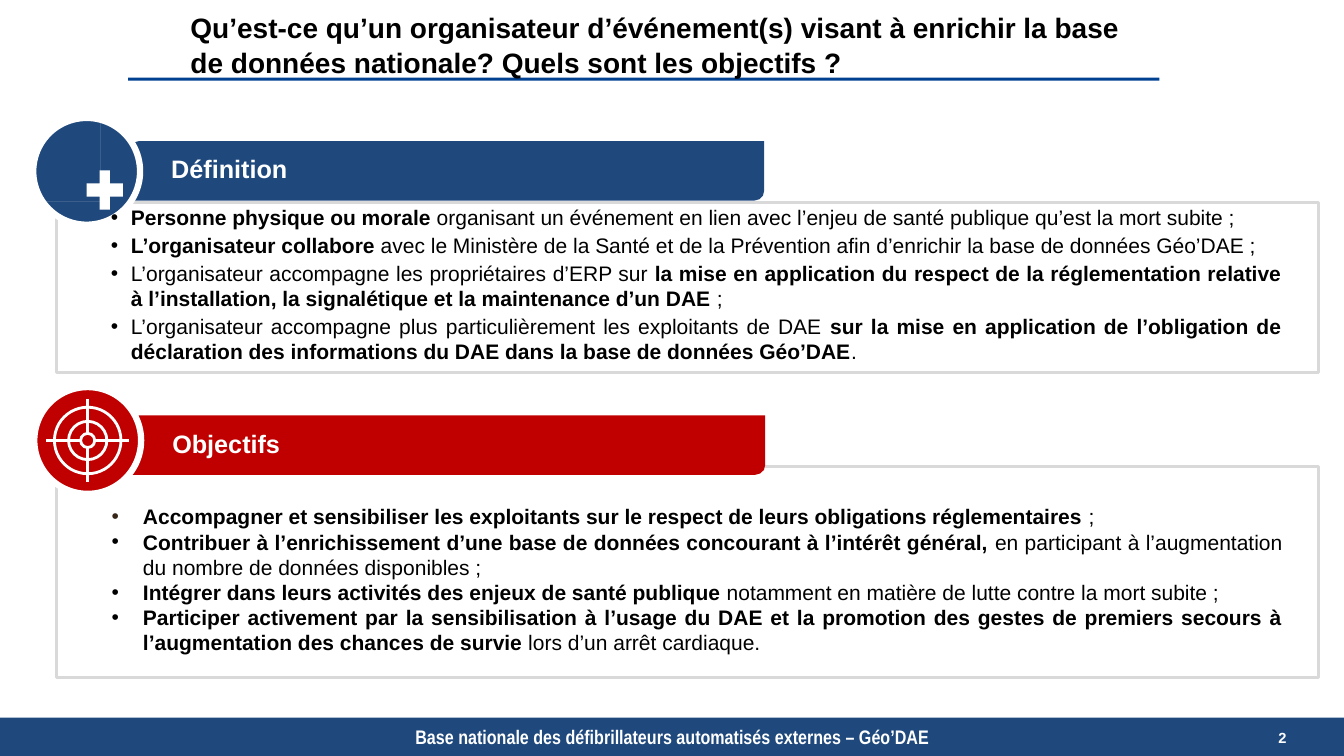
"""Build the slide defining an event organiser and its objectives for Géo’DAE."""
from lxml.etree import SubElement
from pptx import Presentation
from pptx.dml.color import RGBColor
from pptx.enum.shapes import MSO_CONNECTOR, MSO_SHAPE
from pptx.enum.text import MSO_ANCHOR, PP_ALIGN
from pptx.oxml.ns import qn
from pptx.util import Inches, Pt

COLORS = {"blue": "1F497D", "rule": "004192", "red": "C00000", "white": "FFFFFF",
          "grey": "D9D9D9", "black": "000000", "brown": "372517"}


def add_box(kind, place, fill=None, line=None, width=1):
    shape = slide.shapes.add_shape(kind, *map(Inches, place))
    shape.shadow.inherit = False
    if fill:
        shape.fill.solid()
        shape.fill.fore_color.rgb = RGBColor.from_string(COLORS[fill])
    else:
        shape.fill.background()
    if line:
        shape.line.color.rgb = RGBColor.from_string(COLORS[line])
        shape.line.width = Pt(width)
    else:
        shape.line.fill.background()
    return shape


def write(shape, paragraphs, size, color="black", font="Arial", indent=0,
          bullet_colors=(), frame_format=None, paragraph_format=None):
    frame = shape.text_frame
    frame.word_wrap = True
    for name, value in (frame_format or {}).items():
        setattr(frame, name, value)
    for index, runs in enumerate(paragraphs):
        paragraph = frame.add_paragraph() if index else frame.paragraphs[0]
        for name, value in (paragraph_format or {}).items():
            if index or name != "space_before":
                setattr(paragraph, name, value)
        if indent:
            properties = paragraph._p.get_or_add_pPr()
            properties.set("marL", str(Inches(indent)))
            properties.set("indent", str(-Inches(indent)))
            bullet_color = SubElement(properties, qn("a:buClr"))
            SubElement(bullet_color, qn("a:srgbClr"), val=COLORS[bullet_colors[index]])
            SubElement(properties, qn("a:buFont"), typeface="Arial")
            SubElement(properties, qn("a:buChar"), char="•")
        for text, bold in runs:
            run = paragraph.add_run()
            run.text = text
            run_format = {"name": font, "size": Pt(size), "bold": bold}
            for name, value in run_format.items():
                setattr(run.font, name, value)
            run.font.color.rgb = RGBColor.from_string(COLORS[color])


presentation = Presentation()
presentation.slide_width = Inches(13.33)
presentation.slide_height = Inches(7.5)
slide = presentation.slides.add_slide(presentation.slide_layouts[6])

add_box(MSO_SHAPE.RECTANGLE, (0, 7.12, 13.33, 0.38), "blue")
footer = slide.shapes.add_textbox(*map(Inches, (2.93, 7.2, 7.48, 0.22)))
write(footer, [[("Base nationale des défibrillateurs automatisés externes – Géo’DAE", True)]],
      14, "white", "Arial Narrow", frame_format={"vertical_anchor": MSO_ANCHOR.MIDDLE},
      paragraph_format={"alignment": PP_ALIGN.CENTER})
page_number = slide.shapes.add_textbox(*map(Inches, (10.79, 7.12, 1.97, 0.39)))
write(page_number, [[("2", True)]], 10.5, "white",
      frame_format={"vertical_anchor": MSO_ANCHOR.MIDDLE, "margin_right": 0},
      paragraph_format={"alignment": PP_ALIGN.RIGHT})

add_box(MSO_SHAPE.RECTANGLE, (1.27, 0.77, 10.23, 0.03), "rule")
title = slide.shapes.add_textbox(*map(Inches, (1.79, 0.22, 9.72, 0.43)))
write(title, [[("Qu’est-ce qu’un organisateur d’événement(s) visant à enrichir la base de "
                "données nationale? Quels sont les objectifs ?", True)]], 20,
      frame_format={"vertical_anchor": MSO_ANCHOR.MIDDLE},
      paragraph_format={"line_spacing": 1.05})

sections = [
    ("Définition", "blue", (0.56, 2.01, 12.52, 1.69), (1.28, 1.4), (0.33, 1.17)),
    ("Objectifs", "red", (0.56, 4.63, 12.52, 2.09), (1.29, 4.12), (0.34, 3.84)),
]
for heading, color, frame_place, banner_corner, badge_corner in sections:
    add_box(MSO_SHAPE.RECTANGLE, frame_place, "white", "grey", 2.25)
    banner = add_box(MSO_SHAPE.ROUND_2_DIAG_RECTANGLE, (*banner_corner, 6.3, 0.59), color)
    write(banner, [[(heading, True)]], 18, "white",
          frame_format={"vertical_anchor": MSO_ANCHOR.MIDDLE, "margin_left": Inches(0.39),
                        "margin_top": 0, "margin_bottom": Inches(0.04)},
          paragraph_format={"alignment": PP_ALIGN.LEFT})
    add_box(MSO_SHAPE.OVAL, (*badge_corner, 1.06, 1.06), color, "white", 4.5)

heart_path = [
    (0.85, 2.02), (0.67, 1.88, 0.57, 1.75, 0.56, 1.64), (0.56, 1.6),
    (0.57, 1.51, 0.62, 1.47, 0.68, 1.47), (0.73, 1.47, 0.75, 1.49, 0.79, 1.53),
    (0.85, 1.61), (0.91, 1.53), (0.95, 1.49, 0.97, 1.47, 1.02, 1.47),
    (1.08, 1.47, 1.13, 1.51, 1.14, 1.6), (1.14, 1.73), (1.2, 1.73),
    (1.21, 1.7, 1.22, 1.67, 1.22, 1.64), (1.22, 1.6),
    (1.21, 1.46, 1.12, 1.38, 1.02, 1.38), (0.94, 1.38, 0.9, 1.42, 0.85, 1.48),
    (0.81, 1.42, 0.77, 1.38, 0.68, 1.38), (0.58, 1.38, 0.49, 1.46, 0.48, 1.6),
    (0.48, 1.64), (0.49, 1.77, 0.58, 1.93, 0.85, 2.13), (0.94, 2.06), (0.94, 2),
    (0.87, 2),
]
points = [heart_path[0]]
for step in heart_path[1:]:
    if len(step) == 2:
        points.append(step)
        continue
    start, first, second, end = points[-1], step[:2], step[2:4], step[4:]
    for t in (part / 8 for part in range(1, 9)):
        points.append(tuple(
            (1 - t) ** 3 * a + 3 * (1 - t) ** 2 * t * b + 3 * (1 - t) * t ** 2 * c + t ** 3 * d
            for a, b, c, d in zip(start, first, second, end)))
builder = slide.shapes.build_freeform(*points[0], scale=Inches(1))
builder.add_line_segments(points[1:], close=True)
heart = builder.convert_to_shape()
heart.shadow.inherit = False
heart.fill.solid()
heart.fill.fore_color.rgb = RGBColor.from_string(COLORS["white"])
heart.line.fill.background()
plus = add_box(MSO_SHAPE.CROSS, (0.86, 1.69, 0.36, 0.39), "white")
plus.adjustments[0] = 0.36

target_x, target_y, reach = 0.87, 4.37, 0.41
for dx, dy in ((reach, 0), (0, reach)):
    ends = (target_x - dx, target_y - dy, target_x + dx, target_y + dy)
    crosshair = slide.shapes.add_connector(MSO_CONNECTOR.STRAIGHT, *map(Inches, ends))
    crosshair.line.color.rgb = RGBColor.from_string(COLORS["white"])
    crosshair.line.width = Pt(2)
    SubElement(crosshair._element.spPr, qn("a:effectLst"))
for radius, fill in ((0.33, None), (0.19, None), (0.07, "red")):
    add_box(MSO_SHAPE.OVAL, (target_x - radius, target_y - radius, 2 * radius, 2 * radius),
            fill, "white", 2)

definition = [
    [("Personne physique ou morale ", True),
     ("organisant un événement en lien avec l’enjeu de santé publique qu’est la mort subite ;",
      False)],
    [("L’organisateur collabore ", True),
     ("avec le Ministère de la Santé et de la Prévention afin d’enrichir la base de données "
      "Géo’DAE ;", False)],
    [("L’organisateur accompagne les propriétaires d’ERP sur ", False),
     ("la mise en application du respect de la réglementation relative à l’installation, la "
      "signalétique et la maintenance d’un DAE ", True), (";", False)],
    [("L’organisateur accompagne plus particulièrement les exploitants de DAE ", False),
     ("sur la mise en application de l’obligation de déclaration des informations du DAE dans "
      "la base de données Géo’DAE", True), (".", False)],
]
objectives = [
    [("Accompagner et sensibiliser les exploitants sur le respect de leurs obligations "
      "réglementaires ", True), (";", False)],
    [("Contribuer à l’enrichissement d’une base de données concourant à l’intérêt général,",
      True),
     (" en participant à l’augmentation du nombre de données disponibles ;", False)],
    [("Intégrer dans leurs activités des enjeux de santé publique ", True),
     ("notamment en matière de lutte contre la mort subite ;", False)],
    [("Participer activement par la sensibilisation à l’usage du DAE et la promotion des gestes "
      "de premiers secours à l’augmentation des chances de survie ", True),
     ("lors d’un arrêt cardiaque.", False)],
]
lists = [
    (definition, (1, 1.98, 11.81, 1.7), 0.2, 1, ["black"] * 4),
    (objectives, (1.01, 4.95, 11.81, 1.62), 0.31, 0, ["brown"] + ["black"] * 3),
]
for paragraphs, place, indent, gap, bullet_colors in lists:
    text_box = slide.shapes.add_textbox(*map(Inches, place))
    write(text_box, paragraphs, 15, indent=indent, bullet_colors=bullet_colors,
          paragraph_format={"alignment": PP_ALIGN.JUSTIFY, "space_before": Pt(gap),
                            "space_after": Pt(gap)})

presentation.save("out.pptx")
